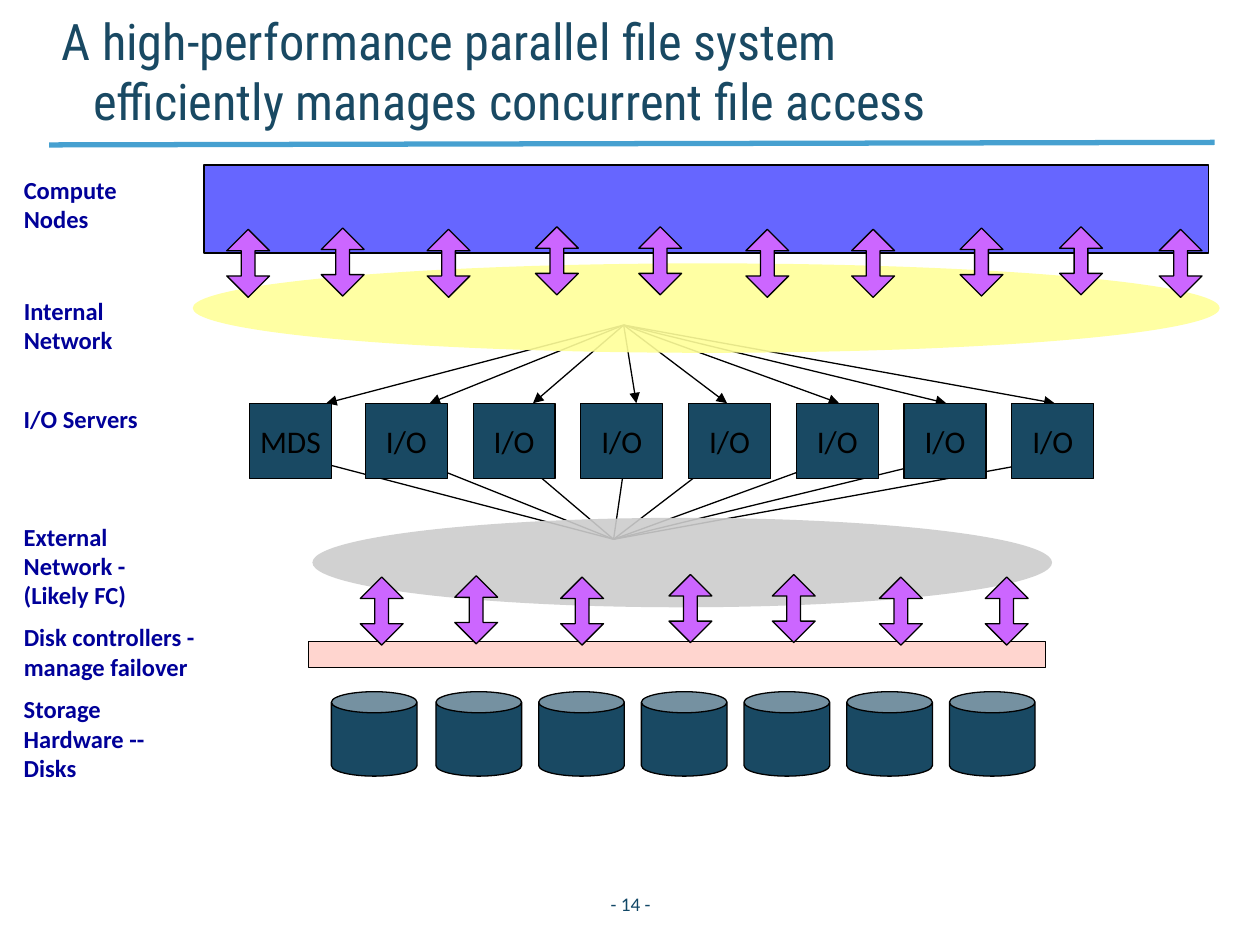
from lxml.etree import SubElement
from pptx import Presentation
from pptx.dml.color import RGBColor
from pptx.enum.shapes import MSO_CONNECTOR, MSO_SHAPE as Preset
from pptx.enum.text import MSO_ANCHOR as Anchor, MSO_AUTO_SIZE as AutoSize, PP_ALIGN as Align
from pptx.oxml.ns import qn
from pptx.util import Inches, Pt

COLORS = {
    "title": "194963", "rule": "46A0D0", "number": "114766", "label": "000099",
    "compute": "6666FF", "internal": "FFFF99", "external": "CCCCCC",
    "controller": "FFD5CF", "unit": "194963", "arrow": "CC66FF", "ink": "000000",
}
TITLE = "A high-performance parallel file system efficiently manages concurrent file access"
PAGE_NUMBER = "- 14 -"
LABELS = [  # text, top, width, height
    ("Compute Nodes", 1.34, 1.19, 0.57),
    ("Internal Network", 2.3, 1.48, 0.57),
    ("I/O Servers", 3.16, 1.27, 0.33),
    ("External Network - (Likely FC)", 4.09, 1.27, 0.8),
    ("Disk controllers - manage failover", 4.89, 2.08, 0.57),
    ("Storage Hardware -- Disks", 5.46, 1.44, 0.8),
]
SERVERS = ["MDS"] + ["I/O"] * 7
SERVER_LEFTS = [1.98] + [2.9 + 0.855 * i for i in range(7)]
DISK_LEFTS = [2.63] + [3.46 + 0.815 * i for i in range(6)]
LINK_ENDS = [2.59, 3.41, 4.23, 5.05, 5.77, 6.66, 7.51, 8.37]
ARROWS = [  # left, top
    (1.8, 1.82), (2.55, 1.81), (3.39, 1.82), (4.25, 1.8), (5.07, 1.8),
    (5.92, 1.82), (6.76, 1.82), (7.62, 1.81), (8.41, 1.8), (9.2, 1.82),
]
LOWER_ARROW_COUNT = 7
LOWER_SHIFT = (1.06, 2.76)


def color(name):
    return RGBColor.from_string(COLORS[name])


def write(shape, text, size, ink, font="Calibri", bold=False, align=Align.LEFT,
          anchor=Anchor.TOP, wrap=True):
    frame = shape.text_frame
    frame.text = text
    frame.word_wrap = wrap
    frame.vertical_anchor = anchor
    para = frame.paragraphs[0]
    para.alignment = align
    span = para.runs[0].font
    span.size, span.name, span.bold = Pt(size), font, bold
    span.color.rgb = color(ink)
    return frame


def add_box(page, bounds, *args, **options):
    box = page.shapes.add_textbox(*map(Inches, bounds))
    return write(box, *args, **options)


def add_preset(page, preset, bounds, fill, outlined=True):
    shape = page.shapes.add_shape(preset, *map(Inches, bounds))
    shape.shadow.inherit = False
    shape.fill.solid()
    shape.fill.fore_color.rgb = color(fill)
    if outlined:
        shape.line.color.rgb = color("ink")
        shape.line.width = Pt(0.75)
    else:
        shape.line.fill.background()
    return shape


def add_network(page, bounds, fill):
    """Add an ellipse that lets the links behind it show faintly."""
    ellipse = add_preset(page, Preset.OVAL, bounds, fill, outlined=False)
    tint = ellipse.fill._xPr.find(qn("a:solidFill"))[0]
    SubElement(tint, qn("a:alpha"), val="90000")


def add_line(page, start, end, ink="ink", width=0.75, arrow=False):
    line = page.shapes.add_connector(MSO_CONNECTOR.STRAIGHT, *map(Inches, start + end))
    line.line.color.rgb = color(ink)
    line.line.width = Pt(width)
    if arrow:
        SubElement(line.line._get_or_add_ln(), qn("a:tailEnd"), type="triangle")
    SubElement(line._element.spPr, qn("a:effectLst"))


def add_fan(page, hub, end_y, shift=0):
    for end_x in LINK_ENDS:
        add_line(page, hub, (end_x + shift, end_y), arrow=True)


def add_arrows(page, places):
    for left, top in places:
        arrow = add_preset(page, Preset.UP_DOWN_ARROW, (left, top, 0.34, 0.54), "arrow")
        arrow.adjustments[0], arrow.adjustments[1] = 0.5, 0.32


def add_texts(page):
    add_line(page, (0.39, 1.15), (9.64, 1.13), "rule", 3)
    title = add_box(page, (0.39, 0.2, 7.7, 0.84), TITLE, 28.8, "title",
                    font="Roboto Condensed", anchor=Anchor.BOTTOM)
    title.margin_top = title.margin_bottom = 0
    hanging = title.paragraphs[0]._p.get_or_add_pPr()
    hanging.set("marL", str(Inches(0.25)))
    hanging.set("indent", str(Inches(-0.25)))
    add_box(page, (4.5, 6.97, 1.01, 0.4), PAGE_NUMBER, 11, "number",
            align=Align.CENTER, anchor=Anchor.MIDDLE)
    for text, top, width, height in LABELS:
        label = add_box(page, (0.09, top, width, height), text, 14, "label", bold=True)
        label.auto_size = AutoSize.SHAPE_TO_FIT_TEXT


def add_diagram(page):
    add_preset(page, Preset.RECTANGLE, (1.62, 1.31, 7.97, 0.7), "compute")
    for left in DISK_LEFTS:
        disk = add_preset(page, Preset.CAN, (left, 5.49, 0.68, 0.67), "unit")
        disk.adjustments[0] = 0.25
    add_preset(page, Preset.RECTANGLE, (2.45, 5.09, 5.85, 0.21), "controller")

    add_fan(page, (4.95, 2.58), 3.2)
    add_network(page, (1.53, 2.09, 8.15, 0.71), "internal")
    add_arrows(page, ARROWS)

    add_fan(page, (4.87, 4.28), 3.66, shift=-0.09)
    for name, left in zip(SERVERS, SERVER_LEFTS):
        server = add_preset(page, Preset.RECTANGLE, (left, 3.2, 0.65, 0.6), "unit")
        write(server, name, 18, "ink", align=Align.CENTER, anchor=Anchor.MIDDLE, wrap=False)
    add_network(page, (2.48, 4.11, 5.87, 0.71), "external")
    across, down = LOWER_SHIFT
    add_arrows(page, [(left + across, top + down) for left, top in ARROWS[:LOWER_ARROW_COUNT]])


def main():
    deck = Presentation()
    deck.slide_width, deck.slide_height = Inches(10), Inches(7.5)
    page = deck.slides.add_slide(deck.slide_layouts[6])
    add_texts(page)
    add_diagram(page)
    deck.save("out.pptx")


if __name__ == "__main__":
    main()
